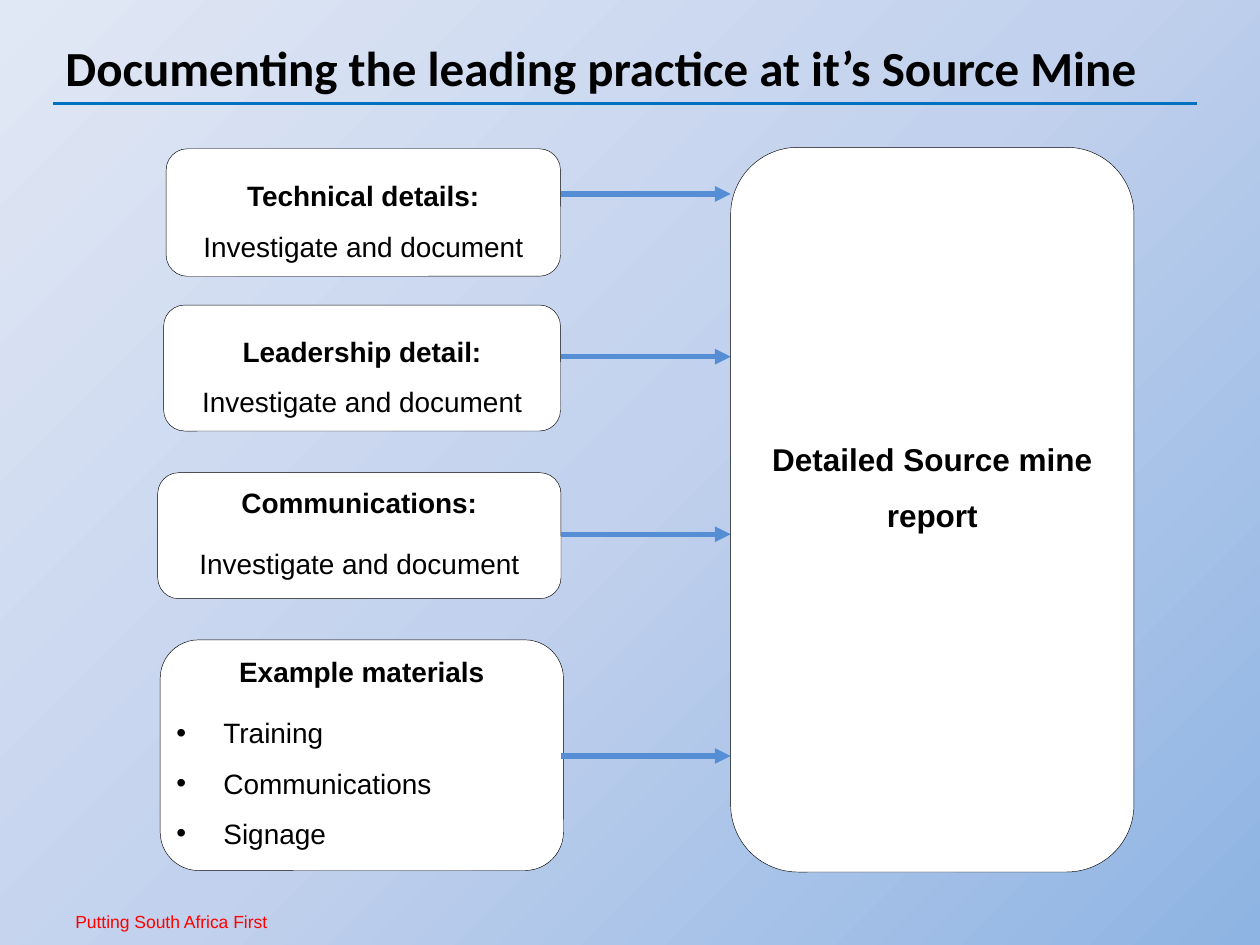
import dataclasses

import lxml.etree
import pptx
import pptx.dml.color
import pptx.enum.shapes
import pptx.enum.text
import pptx.oxml
import pptx.oxml.ns
import pptx.util

Cm = pptx.util.Cm
Pt = pptx.util.Pt
qn = pptx.oxml.ns.qn
ALIGN = pptx.enum.text.PP_ALIGN
ANCHOR = pptx.enum.text.MSO_ANCHOR


@dataclasses.dataclass(frozen=True)
class Theme:
    """Colours, fonts and type sizes of the slide."""
    ink: str = "000000"
    card: str = "FFFFFF"
    rule: str = "0070C0"
    arrow: str = "558ED5"
    motto: str = "FF0000"
    backdrop: tuple = ((0, "8EB4E3"), (50, "C2D1ED"), (100, "E1E8F5"))
    heading_font: str = "Calibri"
    body_font: str = "Arial"
    title_size: int = 28
    report_size: int = 18
    body_size: int = 16
    motto_size: int = 10


@dataclasses.dataclass(frozen=True)
class Box:
    """A region measured in centimetres."""
    left: float
    top: float
    width: float
    height: float

    @property
    def right(self):
        """Return the right edge."""
        return self.left + self.width

    def lengths(self):
        """Return the region as slide lengths."""
        return [Cm(n) for n in (self.left, self.top, self.width, self.height)]


THEME = Theme()
INSET = 0.1
REPORT = Box(14.73, 2.97, 8.13, 14.61)
DOCUMENT = "Investigate and document"


def rgb(code):
    """Turn a hex code into a colour."""
    return pptx.dml.color.RGBColor.from_string(code)


def paint_backdrop(slide):
    """Fill the background with a gradient that spreads from the lower right corner."""
    slide.background.fill.gradient()
    gradient = next(slide.element.iter(qn("a:gradFill")))
    for child in list(gradient):
        gradient.remove(child)
    stops = lxml.etree.SubElement(gradient, qn("a:gsLst"))
    for position, code in THEME.backdrop:
        stop = lxml.etree.SubElement(stops, qn("a:gs"), pos=str(position * 1000))
        lxml.etree.SubElement(stop, qn("a:srgbClr"), val=code)
    spread = lxml.etree.SubElement(gradient, qn("a:path"), path="circle")
    lxml.etree.SubElement(spread, qn("a:fillToRect"), l="100000", t="100000")


def write(paragraph, words, size, bold=False, color=THEME.ink, font=THEME.body_font):
    """Add one styled run to a paragraph."""
    run = paragraph.add_run()
    run.text = words
    run.font.size = Pt(size)
    run.font.bold = bold
    run.font.name = font
    run.font.color.rgb = rgb(color)


def add_label(slide, box, words, inset=None, **style):
    """Place a single-line text in the box."""
    frame = slide.shapes.add_textbox(*box.lengths()).text_frame
    frame.word_wrap = True
    if inset is not None:
        frame.margin_left = frame.margin_right = Cm(inset)
        frame.margin_top = frame.margin_bottom = Cm(inset)
    write(frame.paragraphs[0], words, **style)


def add_line(slide, left, right, y, color, width, arrow=False):
    """Draw a level line, with an arrowhead on request."""
    line = slide.shapes.add_connector(
        pptx.enum.shapes.MSO_CONNECTOR.STRAIGHT, Cm(left), Cm(y), Cm(right), Cm(y))
    line.line.color.rgb = rgb(color)
    line.line.width = Pt(width)
    if arrow:
        lxml.etree.SubElement(line.line._get_or_add_ln(), qn("a:tailEnd"), type="triangle")
    lxml.etree.SubElement(line.element.spPr, qn("a:effectLst"))


def add_heading(slide, box):
    """Place the title with the rule along the bottom of its box."""
    add_label(slide, box, "Documenting the leading practice at it’s Source Mine",
              size=THEME.title_size, bold=True, font=THEME.heading_font)
    add_line(slide, box.left, box.right, box.top + box.height, THEME.rule, 2)


def add_card(slide, box, heading, size, lift):
    """Place a rounded card with a bold heading and return its text frame."""
    card = slide.shapes.add_shape(
        pptx.enum.shapes.MSO_SHAPE.ROUNDED_RECTANGLE, *box.lengths())
    card.shadow.inherit = False
    card.fill.solid()
    card.fill.fore_color.rgb = rgb(THEME.card)
    card.line.color.rgb = rgb(THEME.ink)
    card.line.width = Pt(0.25)
    frame = card.text_frame
    frame.word_wrap = True
    frame.vertical_anchor = ANCHOR.MIDDLE
    frame.margin_left = frame.margin_right = frame.margin_top = Cm(INSET)
    frame.margin_bottom = Cm(INSET + lift)
    first = frame.paragraphs[0]
    first.alignment = ALIGN.CENTER
    first.line_spacing = 1.5
    write(first, heading, size, bold=True)
    return frame


def add_bullet(paragraph):
    """Give a paragraph a hanging bullet."""
    properties = paragraph._p.get_or_add_pPr()
    properties.set("marL", str(Cm(0.95)))
    properties.set("indent", str(-Cm(0.95)))
    lxml.etree.SubElement(properties, qn("a:buFont"), typeface=THEME.body_font)
    lxml.etree.SubElement(properties, qn("a:buChar"), char="•")


def add_input(slide, box, heading, details, gap, lift, arrow_drop):
    """Place an input card and the arrow that leads from it to the report."""
    frame = add_card(slide, box, heading, THEME.body_size, lift)
    bulleted = len(details) > 1
    for index, detail in enumerate(details):
        paragraph = frame.add_paragraph()
        if bulleted:
            add_bullet(paragraph)
        paragraph.alignment = ALIGN.LEFT if bulleted else ALIGN.CENTER
        paragraph.line_spacing = 1.5
        paragraph.space_before = Pt(0 if index else gap)
        write(paragraph, detail, THEME.body_size)
    add_line(slide, 11.3, REPORT.left, box.top + arrow_drop, THEME.arrow, 3, arrow=True)


def main():
    """Build the slide and save it."""
    deck = pptx.Presentation()
    deck.slide_width, deck.slide_height = Cm(25.4), Cm(19.05)
    slide = deck.slides.add_slide(deck.slide_layouts[6])
    paint_backdrop(slide)
    add_label(slide, Box(1.42, 18.26, 4.29, 0.64), "Putting South Africa First",
              inset=INSET, size=THEME.motto_size, color=THEME.motto)
    add_heading(slide, Box(1.07, 0.64, 23.06, 1.45))
    inputs = (
        (Box(3.35, 3, 7.95, 2.57), "Technical details:", [DOCUMENT], 0, 0, 0.91),
        (Box(3.3, 6.15, 8, 2.54), "Leadership detail:", [DOCUMENT], 0, 0, 1.04),
        (Box(3.18, 9.53, 8.13, 2.54), "Communications:", [DOCUMENT], 6, 0.45, 1.24),
        (Box(3.23, 12.9, 8.13, 4.65), "Example materials",
         ["Training", "Communications", "Signage"], 6, 0.45, 2.34),
    )
    for item in inputs:
        add_input(slide, *item)
    add_card(slide, REPORT, "Detailed Source mine report", THEME.report_size, 1.3)
    deck.save("out.pptx")


if __name__ == "__main__":
    main()
